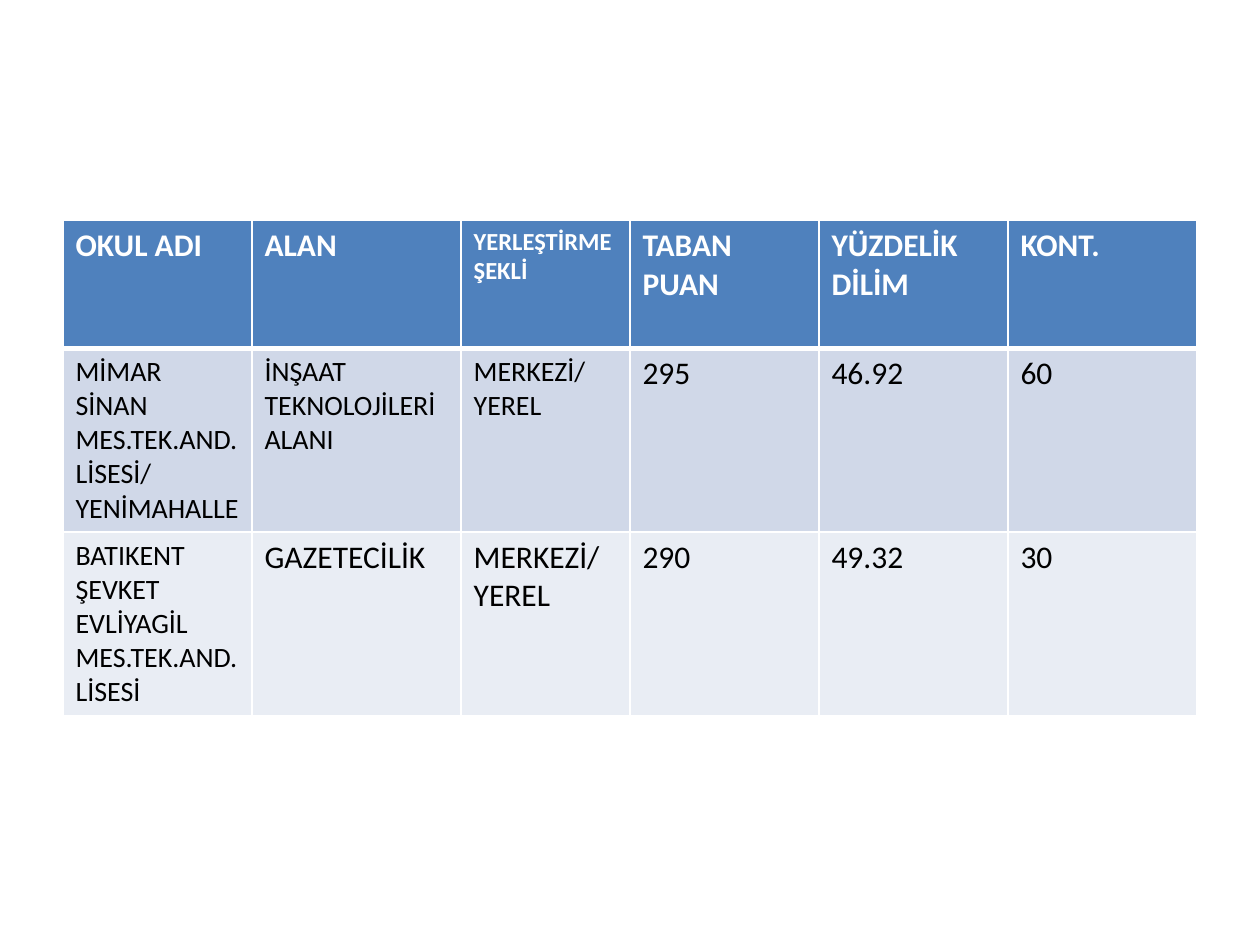
from dataclasses import dataclass

import lxml.etree
import pptx
import pptx.dml.color
import pptx.oxml.ns
import pptx.util

Pt = pptx.util.Pt


@dataclass(frozen=True)
class Theme:
    font: str = "Calibri"
    white: str = "FFFFFF"
    black: str = "000000"
    header_fill: str = "4F81BD"
    band_fills: tuple[str, str] = ("D0D8E8", "E9EDF4")
    large: int = 18
    medium: int = 16
    small: int = 14
    border: int = 1
    header_rule: int = 3


@dataclass(frozen=True)
class Entry:
    text: str  # one paragraph per line
    size: int


@dataclass(frozen=True)
class RowStyle:
    fill: str
    color: str
    bold: bool
    top: int
    bottom: int


THEME = Theme()

# Table content
HEADER = [
    Entry("OKUL ADI", THEME.large),
    Entry("ALAN", THEME.large),
    Entry("YERLEŞTİRME ŞEKLİ", THEME.small),
    Entry("TABAN PUAN", THEME.large),
    Entry("YÜZDELİK\nDİLİM", THEME.large),
    Entry("KONT.", THEME.large),
]
SCHOOLS = [
    [
        Entry("MİMAR SİNAN MES.TEK.AND.\nLİSESİ/\nYENİMAHALLE", THEME.medium),
        Entry("İNŞAAT\nTEKNOLOJİLERİ\nALANI", THEME.medium),
        Entry("MERKEZİ/\nYEREL", THEME.medium),
        Entry("295", THEME.large),
        Entry("46.92", THEME.large),
        Entry("60", THEME.large),
    ],
    [
        Entry("BATIKENT ŞEVKET EVLİYAGİL\nMES.TEK.AND.\nLİSESİ", THEME.medium),
        Entry("GAZETECİLİK", THEME.large),
        Entry("MERKEZİ/\nYEREL", THEME.large),
        Entry("290", THEME.large),
        Entry("49.32", THEME.large),
        Entry("30", THEME.large),
    ],
]

# Table geometry in points
LEFT, TOP = 36, 126
COLUMN_WIDTHS = [108, 119.5, 96.5, 108, 108, 108]
ROW_HEIGHTS = [73, 105, 105]


def set_border(cell, side: str, width: int) -> None:
    properties = cell._tc.get_or_add_tcPr()
    qn = pptx.oxml.ns.qn
    line = lxml.etree.SubElement(properties, qn(f"a:ln{side}"), w=str(Pt(width)))
    fill = lxml.etree.SubElement(line, qn("a:solidFill"))
    lxml.etree.SubElement(fill, qn("a:srgbClr"), val=THEME.white)


def fill_cell(cell, entry: Entry, style: RowStyle) -> None:
    # Borders come before the fill in the cell properties
    widths = {"L": THEME.border, "R": THEME.border, "T": style.top, "B": style.bottom}
    for side, width in widths.items():
        set_border(cell, side, width)
    cell.fill.solid()
    cell.fill.fore_color.rgb = pptx.dml.color.RGBColor.from_string(style.fill)

    cell.text_frame.text = entry.text
    for para in cell.text_frame.paragraphs:
        para.font.name = THEME.font
        para.font.size = Pt(entry.size)
        para.font.bold = style.bold
        para.font.color.rgb = pptx.dml.color.RGBColor.from_string(style.color)


def add_school_table(page) -> None:
    entries = [HEADER, *SCHOOLS]
    rule, thin = THEME.header_rule, THEME.border
    styles = [
        RowStyle(THEME.header_fill, THEME.white, True, thin, rule),
        RowStyle(THEME.band_fills[0], THEME.black, False, rule, thin),
        RowStyle(THEME.band_fills[1], THEME.black, False, thin, thin),
    ]
    table = page.shapes.add_table(
        len(entries), len(HEADER), Pt(LEFT), Pt(TOP),
        Pt(sum(COLUMN_WIDTHS)), Pt(sum(ROW_HEIGHTS)),
    ).table
    for column, width in zip(table.columns, COLUMN_WIDTHS):
        column.width = Pt(width)
    for row, height, row_entries, style in zip(table.rows, ROW_HEIGHTS, entries, styles):
        row.height = Pt(height)
        for cell, entry in zip(row.cells, row_entries):
            fill_cell(cell, entry, style)


def main() -> None:
    deck = pptx.Presentation()
    deck.slide_width, deck.slide_height = Pt(720), Pt(540)
    page = deck.slides.add_slide(deck.slide_layouts[6])
    add_school_table(page)
    deck.save("out.pptx")


if __name__ == "__main__":
    main()
